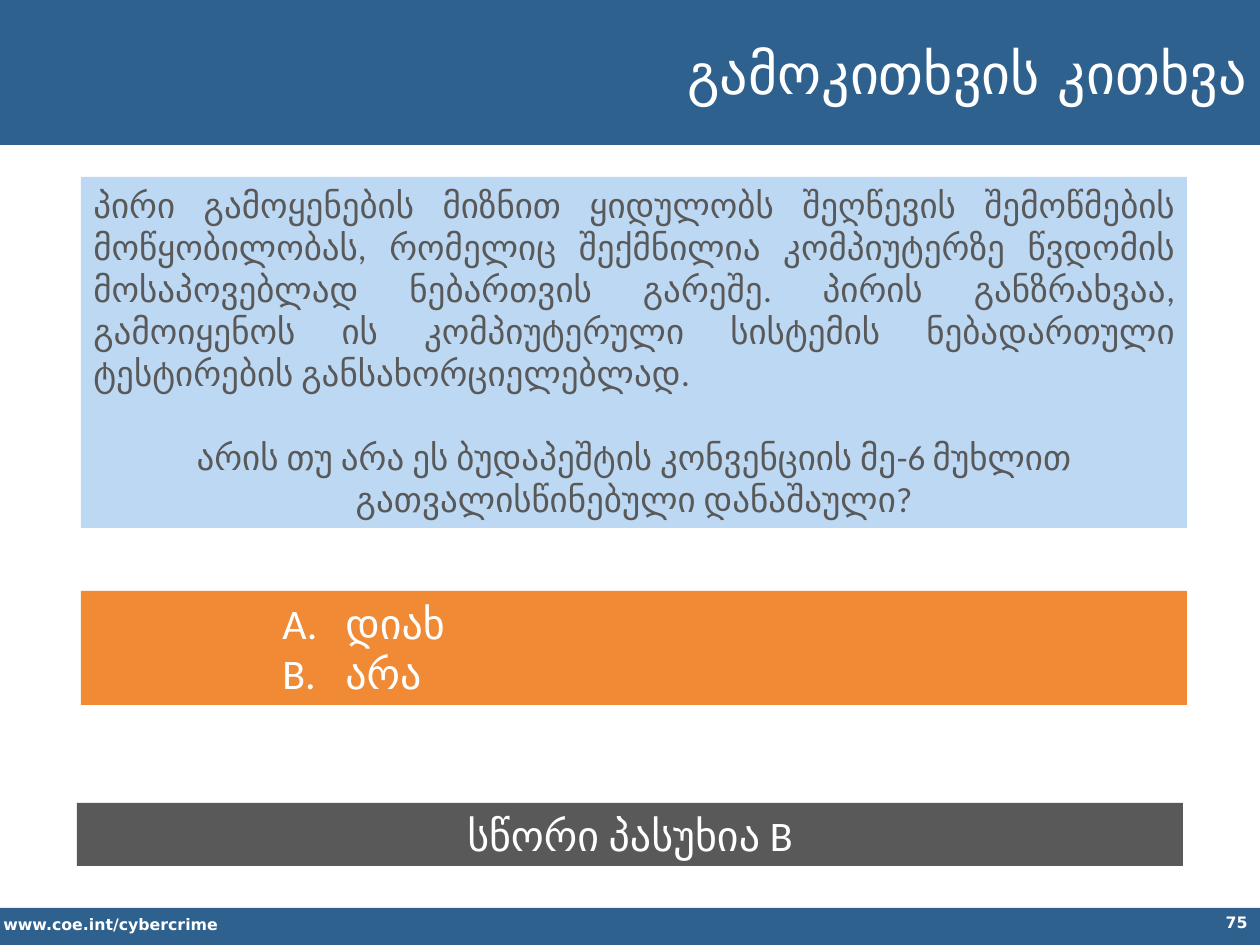
import pptx
import pptx.dml.color
import pptx.enum.shapes
import pptx.enum.text
import pptx.oxml.ns
import pptx.util
from lxml import etree

EMU_PER_PX = 914400 / 126
SLIDE_WIDTH, SLIDE_HEIGHT = 1260, 945
COLORS = {
    "navy": "2F618F",
    "sky": "BDD8F3",
    "orange": "F08A34",
    "gray": "595959",
    "white": "FFFFFF",
}
ALIGN = pptx.enum.text.PP_ALIGN
ANCHOR = pptx.enum.text.MSO_ANCHOR

SCENARIO = (
    "პირი გამოყენების მიზნით ყიდულობს შეღწევის შემოწმების მოწყობილობას, "
    "რომელიც შექმნილია კომპიუტერზე წვდომის მოსაპოვებლად ნებართვის გარეშე. "
    "პირის განზრახვაა, გამოიყენოს ის კომპიუტერული სისტემის ნებადართული "
    "ტესტირების განსახორციელებლად."
)
QUESTION = (
    "არის თუ არა ეს ბუდაპეშტის კონვენციის მე-6 მუხლით "
    "გათვალისწინებული დანაშაული?"
)
ANSWERS = ["დიახ", "არა"]


def px(length):
    return pptx.util.Emu(round(length * EMU_PER_PX))


def rgb(name):
    return pptx.dml.color.RGBColor.from_string(COLORS[name])


def fill_with(shape, color):
    shape.fill.solid()
    shape.fill.fore_color.rgb = rgb(color)


def add_panel(slide, left, top, width, height, color):
    panel = slide.shapes.add_shape(
        pptx.enum.shapes.MSO_SHAPE.RECTANGLE,
        px(left), px(top), px(width), px(height))
    panel.shadow.inherit = False
    fill_with(panel, color)
    panel.line.fill.background()
    panel.text_frame.vertical_anchor = ANCHOR.TOP
    return panel


def number_with_letters(para):
    """Give the paragraph an automatic A., B., ... label and a hanging indent."""
    properties = para._p.get_or_add_pPr()
    properties.set("marL", str(px(252)))
    properties.set("indent", str(px(-63)))
    etree.SubElement(properties, pptx.oxml.ns.qn("a:buFont"), typeface="+mj-lt")
    etree.SubElement(properties, pptx.oxml.ns.qn("a:buAutoNum"), type="alphaUcPeriod")


def write(shape, text, *, size, color="white", font="Calibri", bold=False,
          align=ALIGN.LEFT, space_before=0, lettered=False):
    """Write text in the first paragraph if it is empty, else in a new one."""
    frame = shape.text_frame
    frame.word_wrap = True
    para = frame.add_paragraph() if frame.text else frame.paragraphs[0]
    para.alignment = align
    if space_before:
        para.space_before = pptx.util.Pt(space_before)
    if lettered:
        para.level = 3
        number_with_letters(para)
    span = para.add_run()
    span.text = text
    span.font.size = pptx.util.Pt(size)
    span.font.name = font
    span.font.bold = bold
    span.font.color.rgb = rgb(color)


def add_footer_text(slide, text, left, top, width, height, align):
    box = slide.shapes.add_textbox(px(left), px(top), px(width), px(height))
    write(box, text, size=9, font="DejaVu Sans", bold=True, align=align)


def format_title(slide, text):
    title = slide.shapes.title
    title.left, title.top, title.width, title.height = map(px, (277, 9, 983, 127))
    fill_with(title, "navy")
    title.text_frame.auto_size = pptx.enum.text.MSO_AUTO_SIZE.NONE
    title.text_frame.vertical_anchor = ANCHOR.MIDDLE
    write(title, text, size=32, font="DejaVu Sans", align=ALIGN.RIGHT)
    # The title lies in front of the header band.
    slide.shapes._spTree.append(title._element)


def main():
    deck = pptx.Presentation()
    deck.slide_width, deck.slide_height = px(SLIDE_WIDTH), px(SLIDE_HEIGHT)
    slide = deck.slides.add_slide(deck.slide_layouts[5])

    add_panel(slide, 0, 0, SLIDE_WIDTH, 145, "navy")
    add_panel(slide, 0, 908, SLIDE_WIDTH, SLIDE_HEIGHT - 908, "navy")
    add_footer_text(slide, "www.coe.int/cybercrime", -9, 909, 444, 32, ALIGN.LEFT)
    add_footer_text(slide, "75", 976, 907, 284, 38, ALIGN.RIGHT)

    question = add_panel(slide, 81, 177, 1106, 351, "sky")
    write(question, SCENARIO, size=20, color="gray", align=ALIGN.JUSTIFY)
    write(question, QUESTION, size=20, color="gray", align=ALIGN.CENTER,
          space_before=24)

    solution = add_panel(slide, 77, 803, 1106, 63, "gray")
    write(solution, "სწორი პასუხია B", size=24, align=ALIGN.CENTER)

    choices = add_panel(slide, 81, 591, 1106, 114, "orange")
    for answer in ANSWERS:
        write(choices, answer, size=24, lettered=True)

    format_title(slide, "გამოკითხვის კითხვა")
    deck.save("out.pptx")


if __name__ == "__main__":
    main()
